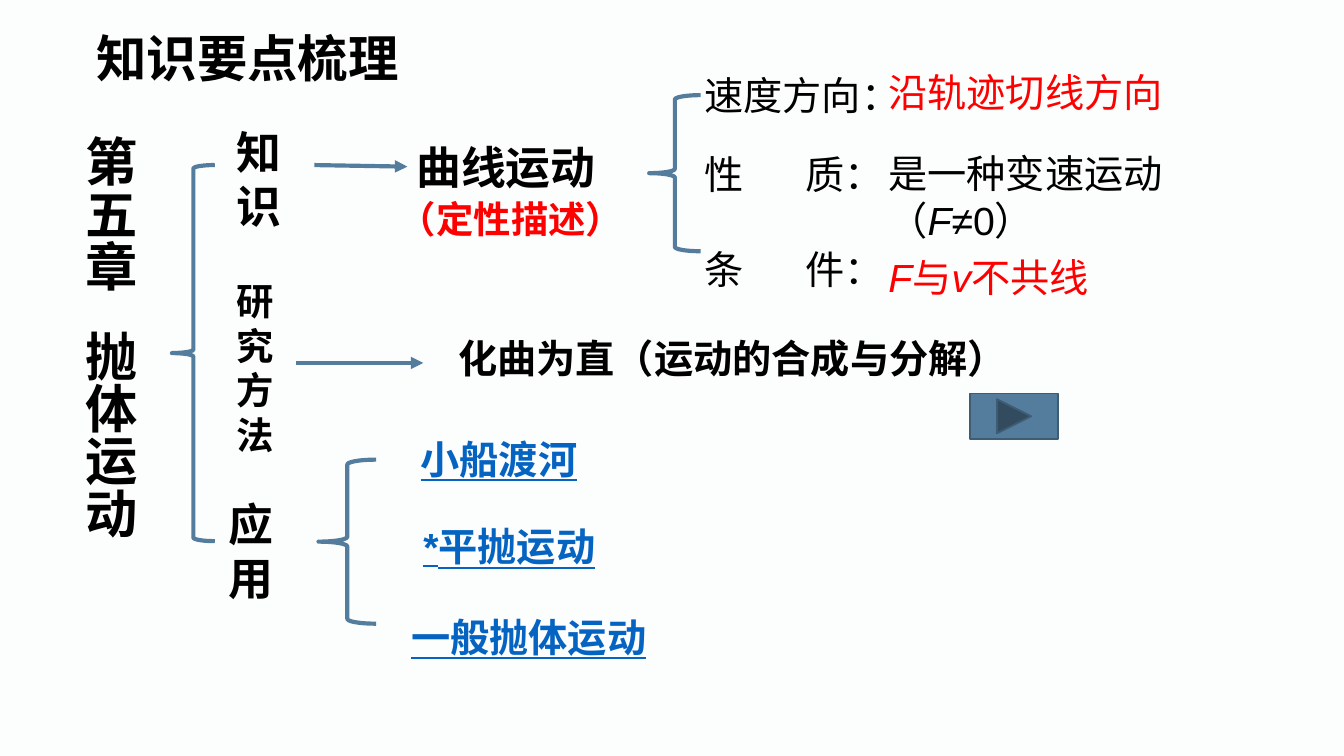
from lxml import etree
from pptx import Presentation
from pptx import util as u
from pptx.dml.color import RGBColor
from pptx.enum import shapes, text
from pptx.oxml.ns import qn

BLACK = RGBColor(0x00, 0x00, 0x00)
RED = RGBColor(0xFF, 0x00, 0x00)
LINK_BLUE = RGBColor(0x05, 0x63, 0xC1)
STEEL = RGBColor(0x54, 0x7D, 0x9D)
DARK_STEEL = RGBColor(0x3E, 0x5C, 0x74)
PAPER = RGBColor(0xFC, 0xFD, 0xFD)
LATIN = "Arial"
CHINESE = "Noto Sans CJK SC"


def cm(*lengths):
    return [u.Cm(length) for length in lengths]


def add_span(para, content, size, color, bold, italic, underline, face):
    span = para.add_run()
    span.text = content
    font = span.font
    font.name = face
    font.size = u.Pt(size)
    font.bold = bold
    font.italic = italic
    font.underline = underline
    font.color.rgb = color
    east_asian = etree.SubElement(font._element, qn("a:ea"))
    east_asian.set("typeface", CHINESE)


def add_label(page, place, spans, size, color=BLACK, bold=False,
              underline=False, face=LATIN, italics=()):
    box = page.shapes.add_textbox(*cm(*place))
    frame = box.text_frame
    frame.word_wrap = True
    frame.auto_size = text.MSO_AUTO_SIZE.SHAPE_TO_FIT_TEXT
    para = frame.paragraphs[0]
    for content in spans:
        add_span(para, content, size, color, bold, content in italics,
                 underline, face)
    return box


def set_tab(box, position):
    properties = box.text_frame.paragraphs[0]._p.get_or_add_pPr()
    stops = etree.SubElement(properties, qn("a:tabLst"))
    etree.SubElement(stops, qn("a:tab"), pos=str(u.Cm(position)), algn="l")


def make_vertical(box):
    frame = box.text_frame
    frame.margin_top = u.Cm(0.18)
    frame._txBody.bodyPr.set("vert", "eaVert")


def add_brace(page, place):
    brace = page.shapes.add_shape(shapes.MSO_SHAPE.LEFT_BRACE, *cm(*place))
    brace.shadow.inherit = False
    brace.fill.background()
    brace.line.color.rgb = STEEL
    brace.line.width = u.Pt(2.25)


def add_arrow(page, ends):
    arrow = page.shapes.add_connector(shapes.MSO_CONNECTOR.STRAIGHT, *cm(*ends))
    arrow.line.color.rgb = STEEL
    arrow.line.width = u.Pt(2.25)
    etree.SubElement(arrow.line._get_or_add_ln(), qn("a:tailEnd"), type="triangle")
    etree.SubElement(arrow._element.spPr, qn("a:effectLst"))


def add_next_button(page, place):
    kind = shapes.MSO_SHAPE.ACTION_BUTTON_FORWARD_OR_NEXT
    button = page.shapes.add_shape(kind, *cm(*place))
    button.shadow.inherit = False
    button.fill.solid()
    button.fill.fore_color.rgb = STEEL
    button.line.color.rgb = DARK_STEEL
    button.line.width = u.Pt(1)


def add_branches(page):
    add_label(page, (4.22, 2.24, 1.7, 2.31), ["知识"], 24, bold=True)
    add_label(page, (4.22, 5.13, 1.78, 3.68), ["研究方法"], 20, bold=True)
    add_label(page, (4.06, 9.27, 1.78, 2.31), ["应用"], 24, bold=True)
    add_label(page, (7.62, 2.51, 4.32, 1.27), ["曲线运动"], 24, bold=True)
    add_label(page, (7.29, 3.58, 4.88, 1.12), ["（定性描述）"], 20, RED, True)
    add_label(page, (8.41, 6.2, 11.1, 1.14),
              ["化曲为直（运动的合成与分解）"], 21, bold=True)


def add_properties(page):
    for content, top in (("速度方向：", 1.22), ("性\t质：", 2.72), ("条\t件：", 4.52)):
        box = add_label(page, (13.06, top, 4.6, 1.14), [content], 21)
        if "\t" in content:
            set_tab(box, 1.91)
    answers = (
        (1.17, ["沿轨迹切线方向"], RED),
        (2.69, ["是一种变速运动（", "F", "≠0）"], BLACK),
        (4.67, ["F", "与", "v", "不共线"], RED),
    )
    for top, spans, color in answers:
        add_label(page, (16.54, top, 8.1, 1.14), spans, 21, color,
                  italics=("F", "v"))


def add_applications(page):
    topics = (("小船渡河", 7.7, 8.1), ("*平抛运动", 7.75, 9.75),
              ("一般抛体运动", 7.52, 11.46))
    for content, left, top in topics:
        add_label(page, (left, top, 6.4, 1.14), [content], 21, LINK_BLUE,
                  True, True)


def main():
    deck = Presentation()
    deck.slide_width, deck.slide_height = cm(25.4, 14.29)
    page = deck.slides.add_slide(deck.slide_layouts[6])
    page.background.fill.solid()
    page.background.fill.fore_color.rgb = PAPER

    add_label(page, (1.57, 0.38, 6.76, 1.42), ["知识要点梳理"], 27,
              bold=True, face=CHINESE)
    chapter = add_label(page, (1.09, 2.39, 1.7, 8.92), ["第五章\t抛体运动"],
                        28, bold=True)
    make_vertical(chapter)
    set_tab(chapter, 3.68)

    add_branches(page)
    add_properties(page)
    add_applications(page)

    for place in ((3.25, 3.12, 0.81, 7.11), (12.27, 1.8, 0.97, 2.95),
                  (6.02, 8.69, 1.09, 3.1)):
        add_brace(page, place)
    for ends in ((5.94, 3.12, 7.7, 3.15), (5.59, 6.86, 8, 6.86)):
        add_arrow(page, ends)
    add_next_button(page, (18.34, 7.44, 1.65, 0.86))
    deck.save("out.pptx")


if __name__ == "__main__":
    main()
